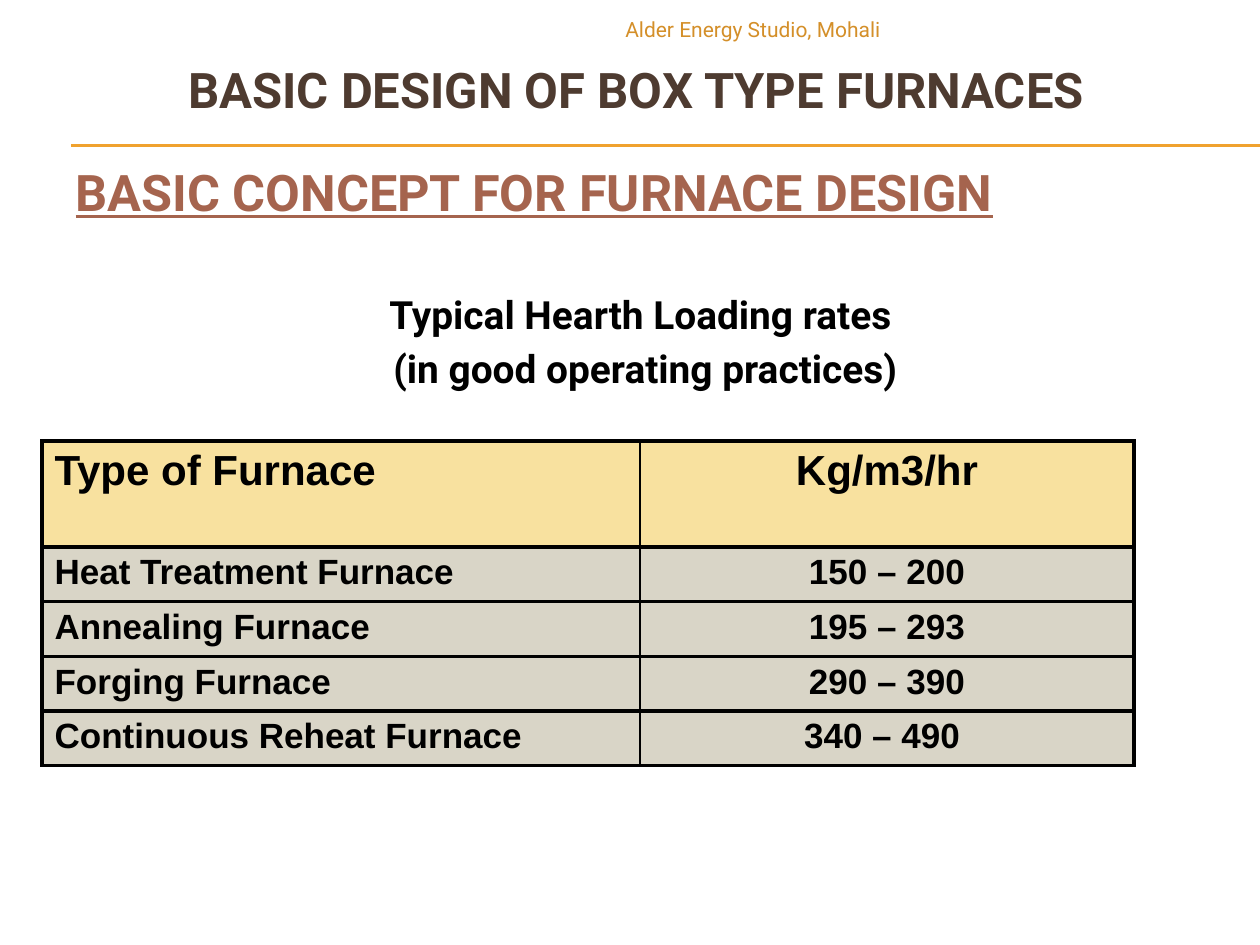
import pptx
import pptx.dml.color
import pptx.enum.shapes
import pptx.enum.text
import pptx.oxml.ns
import pptx.util
from lxml import etree

PX = 914400 / 126
COLORS = {
    "rule": "F0A22E",
    "company": "D48F29",
    "heading": "4E3B30",
    "title": "A5644E",
    "text": "000000",
    "header_row": "F8E19F",
    "data_row": "D9D5C7",
}
ALIGN = pptx.enum.text.PP_ALIGN
ANCHOR = pptx.enum.text.MSO_ANCHOR


def px(*lengths):
    return [pptx.util.Emu(round(length * PX)) for length in lengths]


def rgb(name):
    return pptx.dml.color.RGBColor.from_string(COLORS[name])


class SlideBuilder:
    font = "Roboto"
    table_font = "Arial"

    def __init__(self, presentation):
        self.slide = presentation.slides.add_slide(presentation.slide_layouts[5])

    def style_text(self, frame, text, size, color, align=ALIGN.LEFT, bold=True,
                   underline=False, font=None, space=0):
        frame.text = text
        frame.word_wrap = True
        for paragraph in frame.paragraphs:
            paragraph.alignment = align
            paragraph.space_before = pptx.util.Pt(space)
            for run in paragraph.runs:
                run.font.name = font or self.font
                run.font.size = pptx.util.Pt(size)
                run.font.bold = bold
                run.font.underline = underline
                run.font.color.rgb = rgb(color)

    def title(self, box, text, size, color):
        title = self.slide.shapes.title
        title.left, title.top, title.width, title.height = px(*box)
        self.style_text(title.text_frame, text, size, color, underline=True)
        title.text_frame.vertical_anchor = ANCHOR.MIDDLE

    def text(self, box, text, size, color, **style):
        textbox = self.slide.shapes.add_textbox(*px(*box))
        self.style_text(textbox.text_frame, text, size, color, **style)

    def rule(self, left, right, y):
        line = self.slide.shapes.add_connector(
            pptx.enum.shapes.MSO_CONNECTOR.STRAIGHT, *px(left, y, right, y))
        line.line.color.rgb = rgb("rule")
        line.line.width = pptx.util.Pt(0.75)
        etree.SubElement(line._element.spPr, pptx.oxml.ns.qn("a:effectLst"))

    def borders(self, cell, widths):
        properties = cell._tc.get_or_add_tcPr()
        for side, width in widths.items():
            border = etree.SubElement(
                properties, pptx.oxml.ns.qn("a:ln" + side),
                w=str(pptx.util.Pt(width)))
            fill = etree.SubElement(border, pptx.oxml.ns.qn("a:solidFill"))
            etree.SubElement(fill, pptx.oxml.ns.qn("a:srgbClr"), val=COLORS["text"])

    def table(self, left, top, widths, heights, rows):
        table = self.slide.shapes.add_table(
            len(rows), len(widths), *px(left, top, sum(widths), sum(heights))).table
        for column, width in zip(table.columns, px(*widths)):
            column.width = width
        for row, height in zip(table.rows, px(*heights)):
            row.height = height
        for r, values in enumerate(rows):
            for c, value in enumerate(values):
                cell = table.cell(r, c)
                self.style_text(cell.text_frame, value, 20 if r else 24, "text",
                                align=ALIGN.CENTER if c else ALIGN.LEFT,
                                font=self.table_font)
                # Heavy frame and row lines, thin line between the columns
                self.borders(cell, {"L": 1 if c else 2.25, "R": 2.25 if c else 1,
                                    "T": 2.25, "B": 2.25})
                cell.fill.solid()
                cell.fill.fore_color.rgb = rgb("data_row" if r else "header_row")


def main():
    presentation = pptx.Presentation()
    presentation.slide_width, presentation.slide_height = px(1260, 945)
    builder = SlideBuilder(presentation)

    # Double rule under the heading
    for y in (145, 146):
        builder.rule(71, 1260, y)

    # Title and table caption
    builder.title((63, 157, 1134, 69), "BASIC CONCEPT FOR FURNACE DESIGN",
                  28.8, "title")
    builder.text((31, 284, 1229, 105),
                 "Typical Hearth Loading rates \n(in good operating practices)",
                 22.2, "text", align=ALIGN.CENTER, space=4.44)

    # Hearth loading rates
    builder.table(42, 441, (598, 494), (106, 52, 52, 52, 52), [
        ("Type of Furnace", "Kg/m3/hr"),
        ("Heat Treatment Furnace", "150 – 200"),
        ("Annealing Furnace", "195 – 293"),
        ("Forging Furnace", "290 – 390"),
        ("Continuous Reheat Furnace", "340 – 490 "),
    ])

    # Presentation heading and company
    builder.text((53, 53, 1166, 72), "BASIC DESIGN OF BOX TYPE FURNACES",
                 28, "heading", align=ALIGN.CENTER)
    builder.text((431, 10, 462, 40), "Alder Energy Studio, Mohali",
                 12, "company", align=ALIGN.RIGHT, bold=False)

    presentation.save("out.pptx")


if __name__ == "__main__":
    main()
